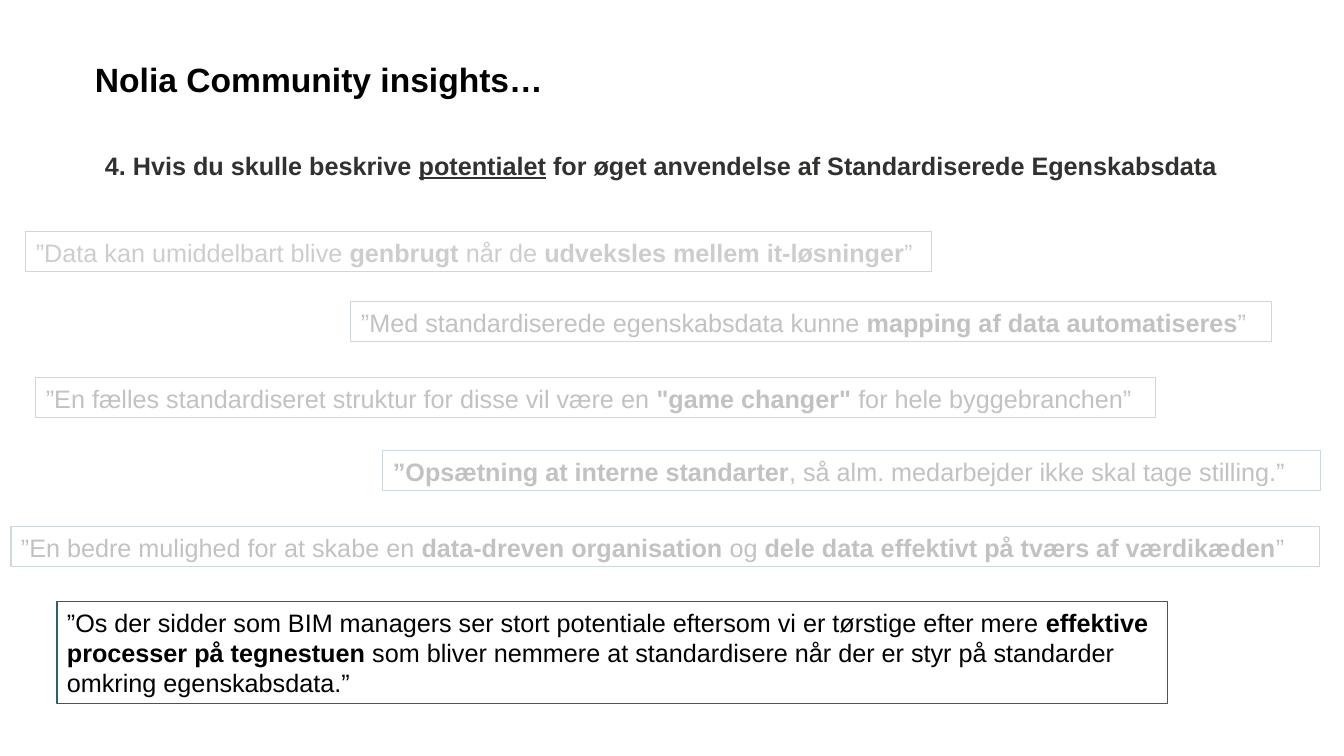
"""Build the community insights slide with five faded quotes and one in focus."""
from lxml import etree
from pptx import Presentation, util as u
from pptx.dml.color import RGBColor
from pptx.enum import shapes, text
from pptx.oxml.ns import qn

PX = 914400 / 100.8
FONT = "Arial"
HUES = {"ink": "000000", "soft": "323130", "edge": "315D6D", "veil": "FFFFFF"}
OPAQUE = 76

TITLE = ("Nolia Community insights…", (95, 54, 1036, 120))
ASK = ("4. Hvis du skulle beskrive *potentialet* for øget anvendelse af "
       "Standardiserede Egenskabsdata", (95, 145, 1194, 40))
QUOTES = [
    ("”Data kan umiddelbart blive *genbrugt *når de *udveksles mellem it-løsninger*”",
     (26, 232, 906, 40), "soft"),
    ("”Med standardiserede egenskabsdata kunne *mapping af data automatiseres*”",
     (351, 302, 921, 40), "ink"),
    ("”En fælles standardiseret struktur for disse vil være en "
     "*\"game changer\" *for hele byggebranchen”",
     (36, 378, 1120, 40), "ink"),
    ("*”Opsætning at interne standarter*, så alm. medarbejder ikke skal tage stilling.”",
     (383, 451, 938, 40), "ink"),
    ("”En bedre mulighed for at skabe en *data-dreven organisation* og "
     "*dele data effektivt på tværs af værdikæden*”",
     (11, 527, 1309, 40), "ink"),
    ("”Os der sidder som BIM managers ser stort potentiale eftersom vi er tørstige "
     "efter mere *effektive processer på tegnestuen* som bliver nemmere at "
     "standardisere når der er styr på standarder omkring egenskabsdata.”",
     (57, 602, 1111, 102), "ink"),
]
VEILS = [(11, 223, 955, 60), (335, 297, 955, 60), (28, 372, 1137, 50),
         (356, 447, 975, 50), (9, 521, 1320, 50)]


def scale(box):
    return [round(n * PX) for n in box]


def hue(name):
    return RGBColor.from_string(HUES[name])


def write(shape, words, size, color, mark="bold", bold=None):
    frame = shape.text_frame
    frame.word_wrap = True
    frame.vertical_anchor = text.MSO_ANCHOR.TOP
    para = frame.paragraphs[0]
    para.alignment = text.PP_ALIGN.LEFT
    para.font.name, para.font.size, para.font.bold = FONT, u.Pt(size), bold
    para.font.color.rgb = hue(color)
    for i, part in enumerate(words.split("*")):
        if part:
            run = para.add_run()
            run.text = part
            if i % 2:
                setattr(run.font, mark, True)
    return frame


def add_rect(slide, box):
    rect = slide.shapes.add_shape(shapes.MSO_SHAPE.RECTANGLE, *scale(box))
    rect.shadow.inherit = False
    return rect


def add_quote(slide, words, box, color):
    rect = add_rect(slide, box)
    rect.fill.background()
    rect.line.color.rgb = hue("edge")
    rect.line.width = u.Pt(0.75)
    write(rect, words, 18, color)


def add_veil(slide, box):
    rect = add_rect(slide, box)
    rect.line.fill.background()
    rect.fill.solid()
    rect.fill.fore_color.rgb = hue("veil")
    tint = rect.fill._xPr.find(".//" + qn("a:srgbClr"))
    etree.SubElement(tint, qn("a:alpha")).set("val", str(OPAQUE * 1000))


def main():
    deck = Presentation()
    deck.slide_width, deck.slide_height = scale((1344, 756))
    slide = deck.slides.add_slide(deck.slide_layouts[6])

    words, box = TITLE
    frame = write(slide.shapes.add_textbox(*scale(box)), words, 24, "ink", bold=True)
    frame.margin_left = frame.margin_right = 0
    words, box = ASK
    write(slide.shapes.add_textbox(*scale(box)), words, 18, "soft", "underline", True)

    for quote in QUOTES:
        add_quote(slide, *quote)
    for box in VEILS:
        add_veil(slide, box)
    deck.save("out.pptx")


if __name__ == "__main__":
    main()
